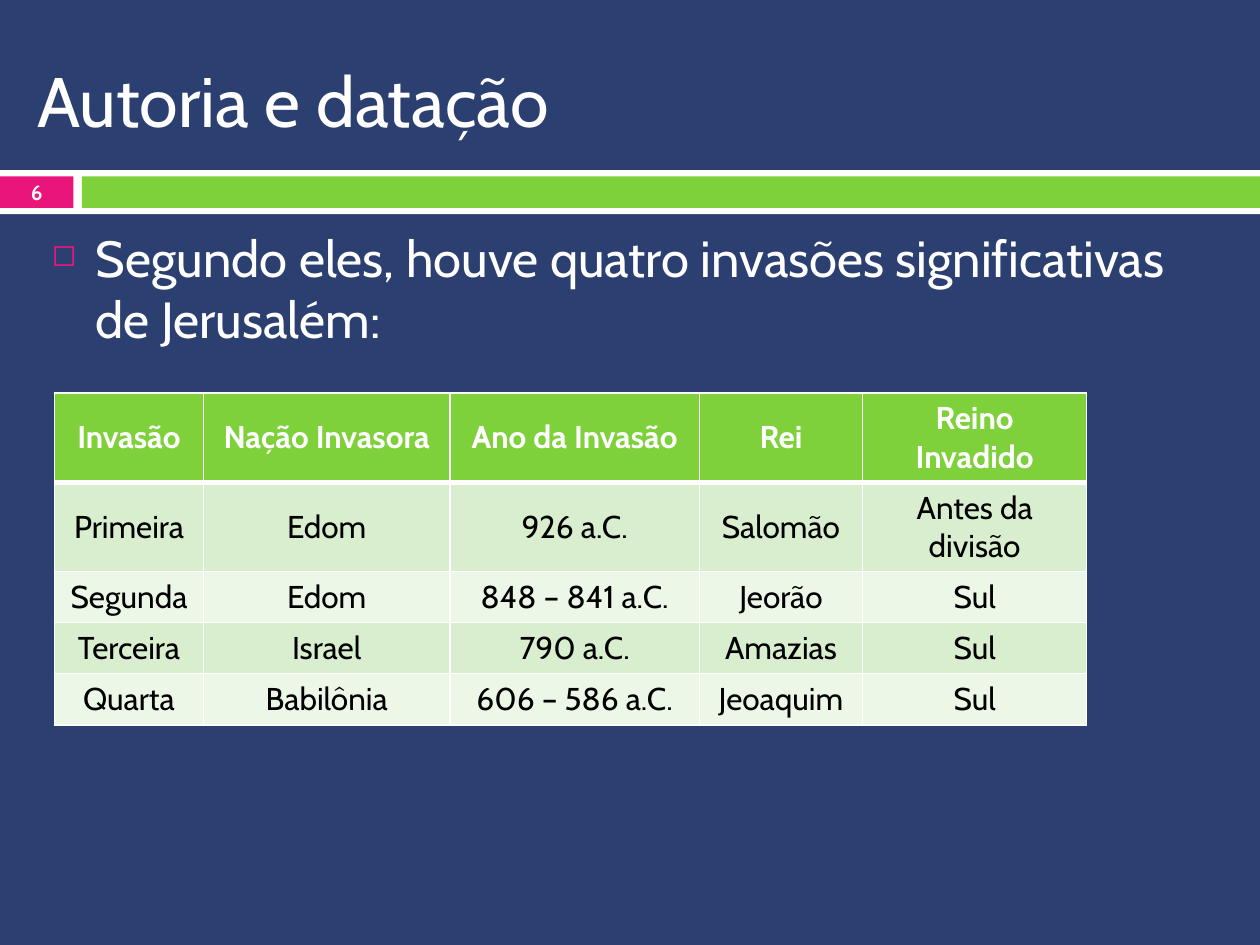
from dataclasses import dataclass

from lxml import etree
from pptx import Presentation
from pptx.dml.color import RGBColor
from pptx.enum import shapes, text
from pptx.oxml import ns
from pptx.util import Pt


@dataclass(frozen=True)
class Theme:
    font: str = "Cabin"
    background: str = "2C3F71"
    white: str = "FFFFFF"
    black: str = "000000"
    pink: str = "EA157A"
    green: str = "7FD13B"
    bands: tuple[str, str] = ("D8EECE", "ECF7E8")
    title: float = 40
    body: float = 29
    table: float = 18
    number: float = 11.9
    thin: float = 1
    thick: float = 3


@dataclass(frozen=True)
class Box:
    left: float
    top: float
    width: float
    height: float

    def lengths(self) -> tuple:
        return Pt(self.left), Pt(self.top), Pt(self.width), Pt(self.height)


@dataclass(frozen=True)
class Bar:
    box: Box
    color: str


THEME = Theme()

BARS = [
    Bar(Box(0, 97.2, 720, 25.2), THEME.white),
    Bar(Box(0, 100.8, 42, 18), THEME.pink),
    Bar(Box(46.8, 100.8, 673.2, 18), THEME.green),
]

TABLE_LEFT, TABLE_TOP = 31.2, 224.6
COLUMN_WIDTHS = [85, 141, 142.4, 93.4, 128]
ROW_HEIGHTS = [51, 51, 29.2, 29.2, 29.2]
INVASIONS = [
    ("Invasão", "Nação Invasora", "Ano da Invasão", "Rei", "Reino Invadido"),
    ("Primeira", "Edom", "926 a.C.", "Salomão", "Antes da divisão"),
    ("Segunda", "Edom", "848 – 841 a.C.", "Jeorão", "Sul"),
    ("Terceira", "Israel", "790 a.C.", "Amazias", "Sul"),
    ("Quarta", "Babilônia", "606 – 586 a.C.", "Jeoaquim", "Sul"),
]


def add_bar(slide, bar: Bar) -> None:
    sp = slide.shapes.add_shape(shapes.MSO_SHAPE.RECTANGLE, *bar.box.lengths())
    sp.shadow.inherit = False
    sp.fill.solid()
    sp.fill.fore_color.rgb = RGBColor.from_string(bar.color)
    sp.line.fill.background()


def add_run(p, words: str, size: float, color: str, bold: bool = False) -> None:
    r = p.add_run()
    r.text = words
    r.font.name = THEME.font
    r.font.size = Pt(size)
    r.font.bold = bold
    r.font.color.rgb = RGBColor.from_string(color)


def add_text(slide, box: Box, words: str, size: float, bold: bool = False,
             anchor=text.MSO_ANCHOR.MIDDLE):
    """Add a wrapped white text box and return its text frame."""
    tf = slide.shapes.add_textbox(*box.lengths()).text_frame
    tf.word_wrap = True
    tf.vertical_anchor = anchor
    add_run(tf.paragraphs[0], words, size, THEME.white, bold)
    return tf


def add_bullet(p, char: str, color: str, percent: int, indent: float) -> None:
    pPr = p._p.get_or_add_pPr()
    pPr.set("marL", str(Pt(indent)))
    pPr.set("indent", str(-Pt(indent)))
    bu_color = etree.SubElement(pPr, ns.qn("a:buClr"))
    etree.SubElement(bu_color, ns.qn("a:srgbClr"), val=color)
    etree.SubElement(pPr, ns.qn("a:buSzPct"), val=str(percent * 1000))
    etree.SubElement(pPr, ns.qn("a:buChar"), char=char)


def set_borders(cell, top: float, bottom: float) -> None:
    widths = {"lnL": THEME.thin, "lnR": THEME.thin, "lnT": top, "lnB": bottom}
    tcPr = cell._tc.get_or_add_tcPr()
    for i, (side, width) in enumerate(widths.items()):
        ln = etree.Element(ns.qn(f"a:{side}"), w=str(Pt(width)))
        fill = etree.SubElement(ln, ns.qn("a:solidFill"))
        etree.SubElement(fill, ns.qn("a:srgbClr"), val=THEME.white)
        tcPr.insert(i, ln)


def fill_cell(cell, words: str, row: int) -> None:
    header = row == 0
    cell.fill.solid()
    cell.fill.fore_color.rgb = RGBColor.from_string(
        THEME.green if header else THEME.bands[(row - 1) % 2])
    cell.vertical_anchor = text.MSO_ANCHOR.MIDDLE
    p = cell.text_frame.paragraphs[0]
    p.alignment = text.PP_ALIGN.CENTER
    add_run(p, words, THEME.table, THEME.white if header else THEME.black, header)
    set_borders(cell, top=THEME.thick if row == 1 else THEME.thin,
                bottom=THEME.thick if header else THEME.thin)


def add_invasions(slide) -> None:
    box = Box(TABLE_LEFT, TABLE_TOP, sum(COLUMN_WIDTHS), sum(ROW_HEIGHTS))
    table = slide.shapes.add_table(
        len(ROW_HEIGHTS), len(COLUMN_WIDTHS), *box.lengths()).table
    for column, width in zip(table.columns, COLUMN_WIDTHS):
        column.width = Pt(width)
    for i, (row, height) in enumerate(zip(table.rows, ROW_HEIGHTS)):
        row.height = Pt(height)
        for cell, words in zip(row.cells, INVASIONS[i]):
            fill_cell(cell, words, i)


def main() -> None:
    prs = Presentation()
    prs.slide_width, prs.slide_height = Pt(720), Pt(540)
    slide = prs.slides.add_slide(prs.slide_layouts[6])
    slide.background.fill.solid()
    slide.background.fill.fore_color.rgb = RGBColor.from_string(THEME.background)

    # Divider bars
    for bar in BARS:
        add_bar(slide, bar)

    # Title
    add_text(slide, Box(14.4, 18, 686, 78), "Autoria e datação", THEME.title)

    # Bulleted statement
    tf = add_text(slide, Box(22.4, 126, 675, 399),
                  "Segundo eles, houve quatro invasões significativas de Jerusalém:",
                  THEME.body, anchor=text.MSO_ANCHOR.TOP)
    p = tf.paragraphs[0]
    p.space_before = Pt(7)
    add_bullet(p, "◻", THEME.pink, percent=60, indent=25.2)

    # Slide number
    tf = add_text(slide, Box(0, 100, 42, 19.6), "6", THEME.number, bold=True)
    tf.margin_left = tf.margin_right = tf.margin_top = tf.margin_bottom = 0
    tf.paragraphs[0].alignment = text.PP_ALIGN.CENTER

    # Table of invasions
    add_invasions(slide)

    prs.save("out.pptx")


if __name__ == "__main__":
    main()
